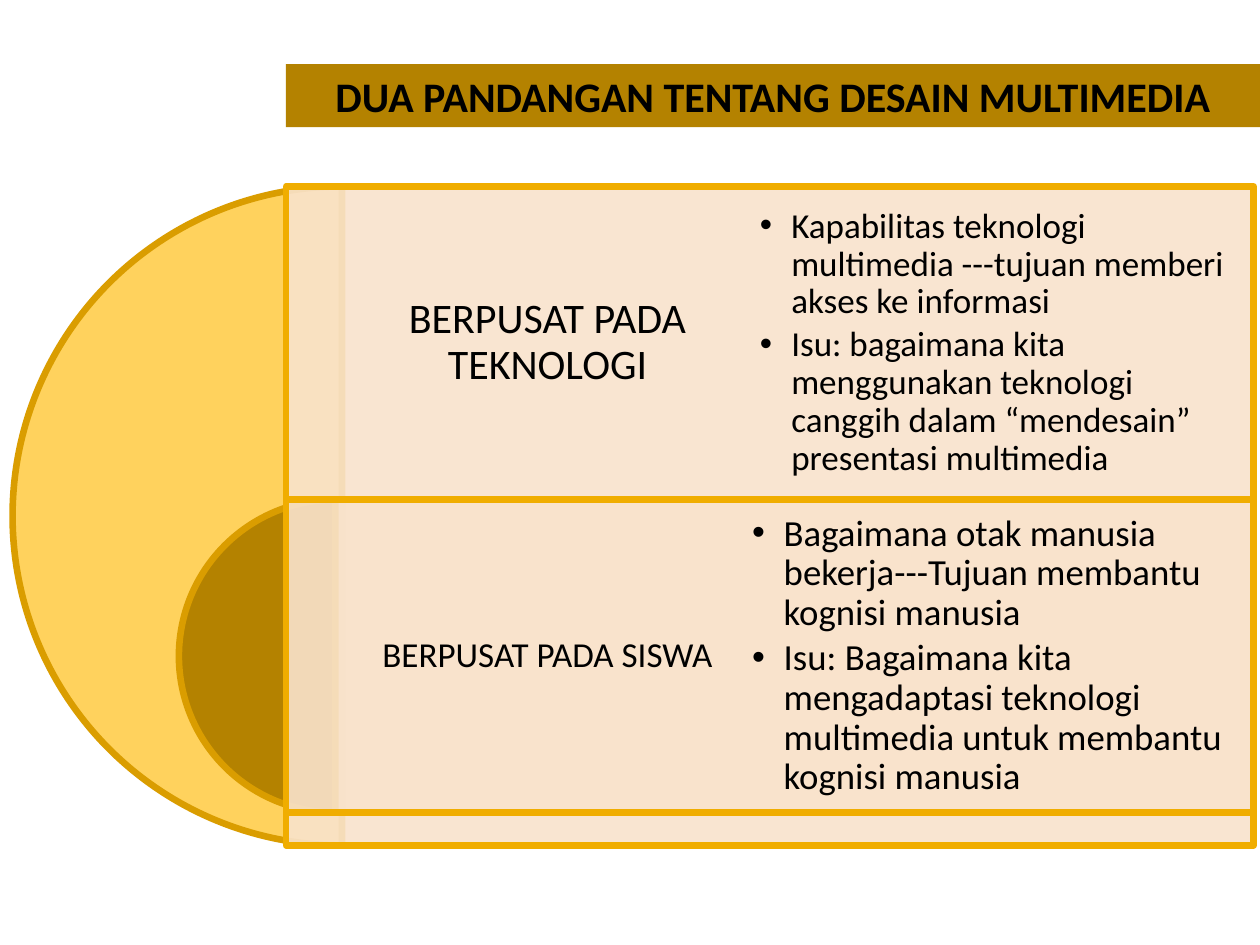
from dataclasses import dataclass

from lxml.etree import SubElement
from pptx import Presentation
from pptx.dml.color import RGBColor
from pptx.enum.shapes import MSO_SHAPE
from pptx.enum.text import MSO_ANCHOR, PP_ALIGN
from pptx.oxml.ns import qn
from pptx.util import Inches, Pt

# Content
TITLE = "DUA PANDANGAN TENTANG DESAIN MULTIMEDIA"
VIEWS = [
    {
        "label": "BERPUSAT PADA TEKNOLOGI",
        "points": [
            "Kapabilitas teknologi multimedia ---tujuan memberi akses ke informasi",
            "Isu: bagaimana kita menggunakan teknologi canggih dalam “mendesain” "
            "presentasi multimedia",
        ],
        "label_size": 24, "point_size": 20, "outline": "0070C0", "label_inset": 0.1,
        "disc": "FFD25D", "disc_left": 0.1, "points_left": 5.94, "points_width": 3.97,
    },
    {
        "label": "BERPUSAT PADA SISWA",
        "points": [
            "Bagaimana otak manusia bekerja---Tujuan membantu kognisi manusia",
            "Isu: Bagaimana kita mengadaptasi teknologi multimedia untuk membantu "
            "kognisi manusia",
        ],
        "label_size": 20, "point_size": 21, "outline": "2F6231", "label_inset": 0.08,
        "disc": "B48200", "disc_left": 1.42, "points_left": 5.88, "points_width": 4.08,
    },
]


@dataclass(frozen=True)
class Theme:
    font: str = "Calibri"
    ink: str = "000000"
    banner: str = "B48200"
    banner_outline: str = "672020"
    disc_line: str = "DA9D00"
    panel: str = "F9E3CC"
    panel_line: str = "F0AD00"
    panel_alpha: int = 90
    line_width: float = 3.78
    outline_width: float = 0.75
    title_size: int = 24


THEME = Theme()

# Grid, in inches
SLIDE_WIDTH, SLIDE_HEIGHT = 10, 7.5
PANEL_LEFT, PANEL_WIDTH = 2.27, 7.68
LABEL_LEFT, LABEL_WIDTH = 2.59, 3.51
ROWS_TOP, ROW_HEIGHT, FOOT_HEIGHT = 1.48, 2.485, 0.26
ROWS_BOTTOM = ROWS_TOP + len(VIEWS) * ROW_HEIGHT + FOOT_HEIGHT
POINT_INSET, POINT_INDENT = 0.09, 0.25


def set_all(target, values):
    for name, value in values.items():
        setattr(target, name, value)


def add_figure(shapes, kind, frame, fill, line=None):
    figure = shapes.add_shape(kind, *map(Inches, frame))
    figure.shadow.inherit = False
    figure.fill.solid()
    figure.fill.fore_color.rgb = RGBColor.from_string(fill)
    if line:
        figure.line.color.rgb = RGBColor.from_string(line)
        figure.line.width = Pt(THEME.line_width)
    else:
        figure.line.fill.background()
    return figure


def set_frame(box, inset_x, inset_y):
    set_all(box.text_frame, {
        "word_wrap": True, "vertical_anchor": MSO_ANCHOR.MIDDLE,
        "margin_left": Inches(inset_x), "margin_right": Inches(inset_x),
        "margin_top": Inches(inset_y), "margin_bottom": Inches(inset_y),
    })


def write(para, text, size, bold=False, outline=None):
    span = para.add_run()
    span.text = text
    set_all(span.font, {"name": THEME.font, "size": Pt(size), "bold": bold})
    if outline:
        edge = SubElement(span.font._element, qn("a:ln"), w=str(Pt(THEME.outline_width)))
        paint = SubElement(edge, qn("a:solidFill"))
        SubElement(paint, qn("a:srgbClr"), val=outline)
        span.font._element.insert(0, edge)
    span.font.color.rgb = RGBColor.from_string(THEME.ink)


def add_banner(page):
    box = add_figure(page.shapes, MSO_SHAPE.RECTANGLE,
                     (PANEL_LEFT, 0.51, SLIDE_WIDTH - PANEL_LEFT, 0.5), THEME.banner)
    set_frame(box, 0.1, 0.05)
    para = box.text_frame.paragraphs[0]
    para.alignment = PP_ALIGN.CENTER
    write(para, TITLE, THEME.title_size, True, THEME.banner_outline)


def add_view(shapes, view, top):
    # Half disc and panel, both reaching down to the end of their level
    height = view["height"]
    disc = add_figure(shapes, MSO_SHAPE.PIE, (view["disc_left"], top, height, height),
                      view["disc"], THEME.disc_line)
    disc.adjustments[0], disc.adjustments[1] = 54, 162
    panel = add_figure(shapes, MSO_SHAPE.RECTANGLE, (PANEL_LEFT, top, PANEL_WIDTH, height),
                       THEME.panel, THEME.panel_line)
    color = panel._element.spPr.find(qn("a:solidFill")).find(qn("a:srgbClr"))
    SubElement(color, qn("a:alpha"), val=str(THEME.panel_alpha * 1000))

    # Label
    box = shapes.add_textbox(*map(Inches, (LABEL_LEFT, top, LABEL_WIDTH, ROW_HEIGHT)))
    set_frame(box, view["label_inset"], view["label_inset"])
    para = box.text_frame.paragraphs[0]
    set_all(para, {"alignment": PP_ALIGN.CENTER, "line_spacing": 0.9})
    write(para, view["label"], view["label_size"], outline=view["outline"])


def add_points(shapes, view, top):
    frame = (view["points_left"], top, view["points_width"], ROW_HEIGHT)
    box = shapes.add_textbox(*map(Inches, frame))
    set_frame(box, POINT_INSET, POINT_INSET)
    for index, point in enumerate(view["points"]):
        paras = box.text_frame
        para = paras.add_paragraph() if index else paras.paragraphs[0]
        set_all(para, {"level": 1, "line_spacing": 0.9,
                       "space_after": Pt(0.15 * view["point_size"])})
        props = para._p.get_or_add_pPr()
        props.set("marL", str(Inches(POINT_INDENT)))
        props.set("indent", str(-Inches(POINT_INDENT)))
        SubElement(props, qn("a:buFont"), typeface="Arial")
        SubElement(props, qn("a:buChar"), char="•")
        write(para, point, view["point_size"])


def main():
    deck = Presentation()
    set_all(deck, {"slide_width": Inches(SLIDE_WIDTH), "slide_height": Inches(SLIDE_HEIGHT)})
    page = deck.slides.add_slide(deck.slide_layouts[6])
    add_banner(page)

    # Nested levels: the outer one also holds the foot strip
    diagram = page.shapes.add_group_shape().shapes
    tops = [ROWS_TOP + row * ROW_HEIGHT for row in range(len(VIEWS))]
    ends = [ROWS_BOTTOM - FOOT_HEIGHT * row for row in range(len(VIEWS))]
    for view, top, end in zip(VIEWS, tops, ends):
        add_view(diagram, {**view, "height": end - top}, top)
    for view, top in zip(VIEWS, tops):
        add_points(diagram, view, top)
    deck.save("out.pptx")


if __name__ == "__main__":
    main()
